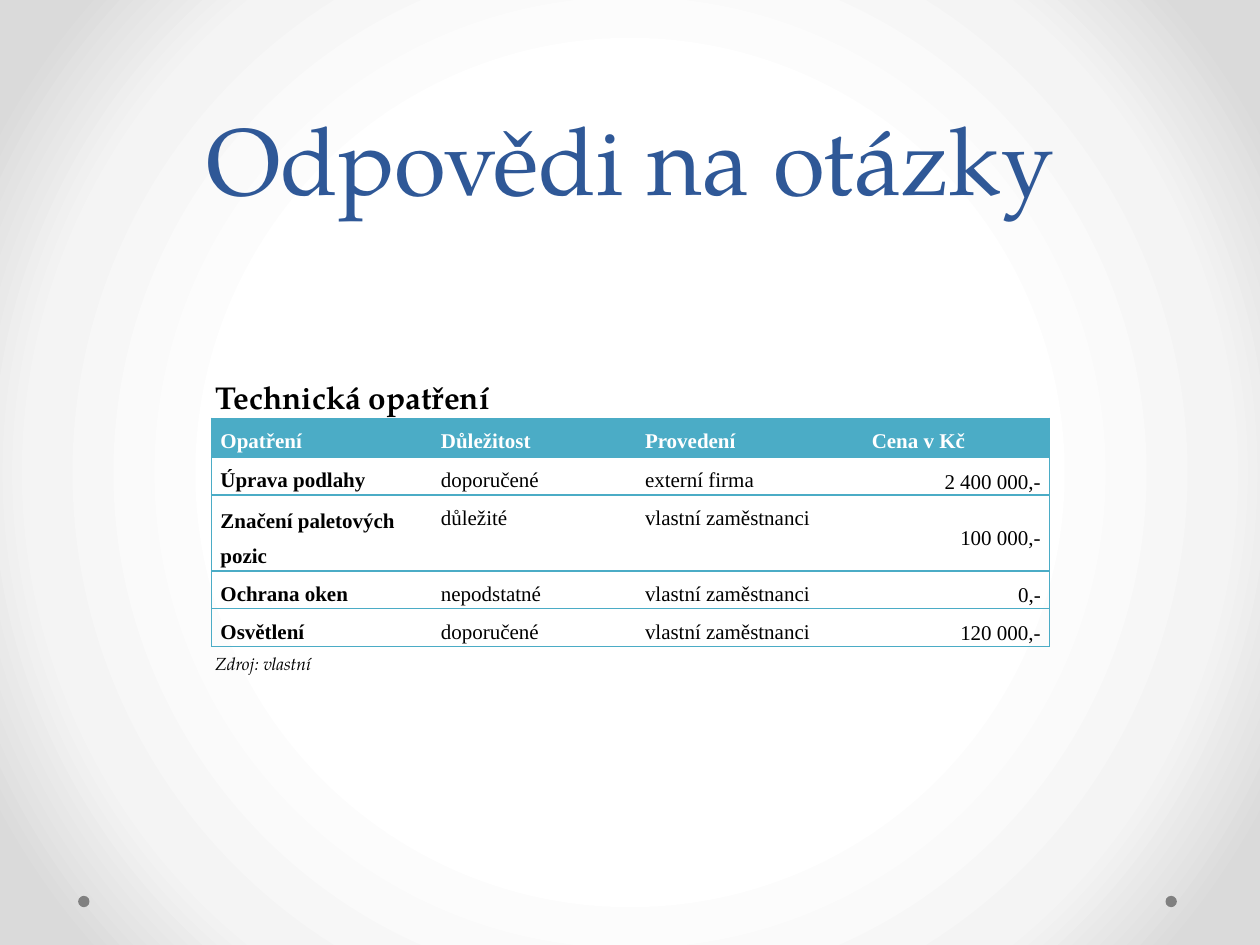
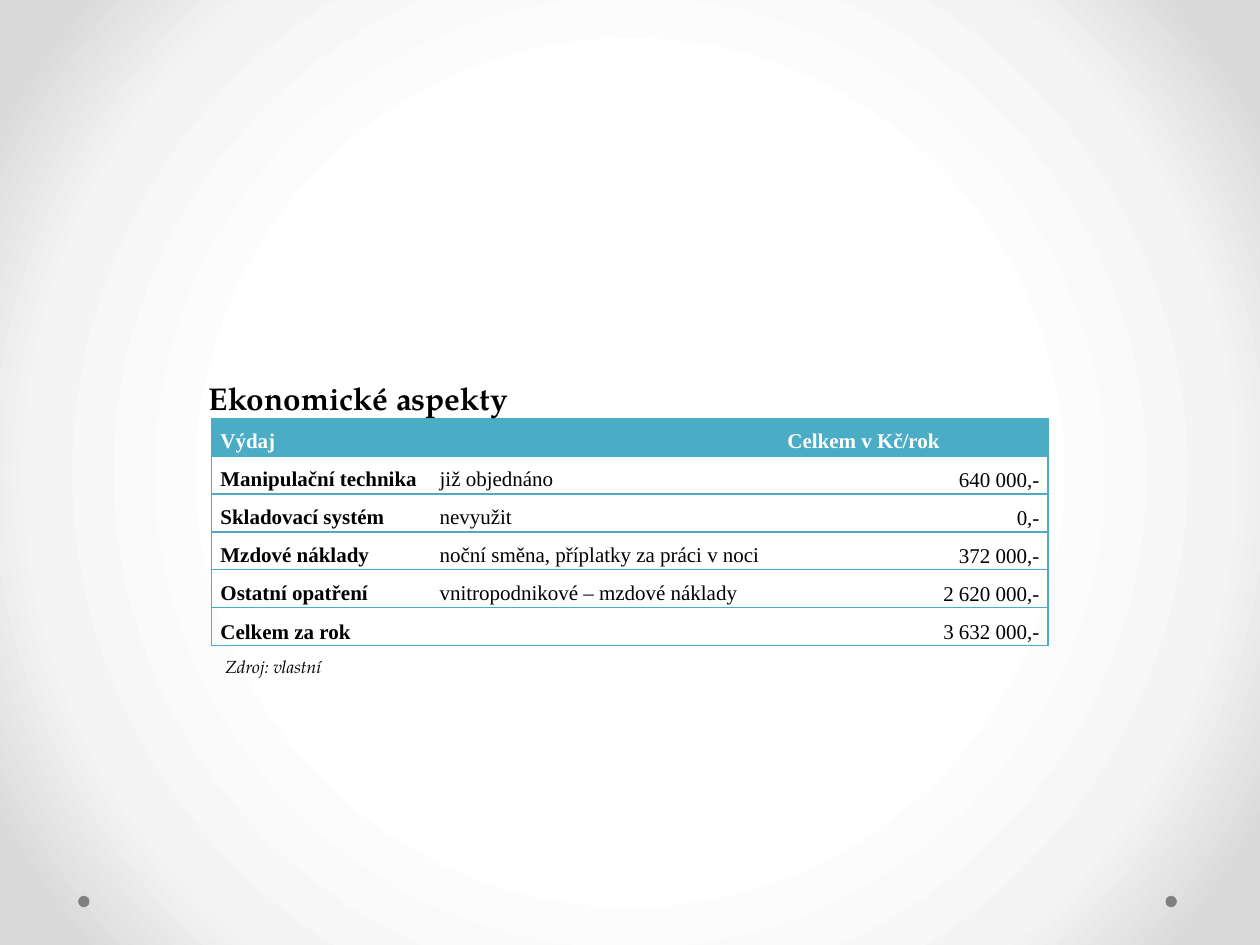
"""Build two slides of answers: technical measures and economic aspects."""
from dataclasses import dataclass
from typing import Optional

import lxml.etree
import pptx
import pptx.dml.color
import pptx.enum.shapes
import pptx.enum.text
import pptx.oxml
import pptx.oxml.ns
import pptx.presentation
import pptx.slide
import pptx.table
import pptx.text.text
import pptx.util

ALIGN = pptx.enum.text.PP_ALIGN
ANCHOR = pptx.enum.text.MSO_ANCHOR
AUTO_SIZE = pptx.enum.text.MSO_AUTO_SIZE
qn = pptx.oxml.ns.qn

SLIDE_WIDTH = pptx.util.Inches(10)
SLIDE_HEIGHT = pptx.util.Inches(7.5)
COLUMN = SLIDE_WIDTH // 100
ROW = SLIDE_HEIGHT // 75


@dataclass(frozen=True)
class TextStyle:
    """Look of a run of text."""
    size: float
    font: str
    color: str = "000000"
    bold: bool = False
    italic: bool = False


@dataclass(frozen=True)
class Theme:
    """Colours and type styles shared by the slides."""
    accent: str = "4BACC6"
    dot: str = "808080"
    border_width: float = 1
    title_leading: float = 58
    cell_leading: float = 1.5
    backdrop: tuple = ((50, "FFFFFF"), (76, "F4F4F4"), (92, "DADADA"))
    title: TextStyle = TextStyle(54, "TeX Gyre Pagella", "2F5897")
    caption: TextStyle = TextStyle(18, "TeX Gyre Pagella", bold=True)
    source: TextStyle = TextStyle(10, "TeX Gyre Pagella", italic=True)
    header: TextStyle = TextStyle(12, "Times New Roman", "FFFFFF", bold=True)
    label: TextStyle = TextStyle(12, "Times New Roman", bold=True)
    body: TextStyle = TextStyle(12, "Times New Roman")


THEME = Theme()


@dataclass(frozen=True)
class Area:
    """Place on the slide in grid columns and rows."""
    left: float
    top: float
    width: float
    height: float

    def box(self) -> tuple[int, int, int, int]:
        """Return left, top, width and height as lengths."""
        return (round(self.left * COLUMN), round(self.top * ROW),
                round(self.width * COLUMN), round(self.height * ROW))


@dataclass(frozen=True)
class CostSlide:
    """Captioned cost table with its source line."""
    caption: str
    caption_area: Area
    source_area: Area
    columns: tuple[float, ...]
    rows: tuple[float, ...]
    left_aligned_label: str
    cells: tuple[tuple[str, ...], ...]
    title: Optional[str] = None


TITLE_AREA = Area(5, 0, 90, 17.5)
DOT_AREAS = tuple(Area(left, 71.1, 0.9, 0.9) for left in (6.2, 92.5))
TABLE_LEFT, TABLE_TOP = 16.8, 33.2
CELL_INSET = round(0.7 * COLUMN)
SOURCE = "Zdroj: vlastní"

COST_SLIDES = (
    CostSlide(
        title="Odpovědi na otázky",
        caption="Technická opatření",
        caption_area=Area(16.1, 29.5, 24, 4),
        source_area=Area(16.1, 51.3, 9.8, 2.7),
        columns=(17.5, 16.2, 18, 14.8),
        rows=(3.1, 3, 6, 3, 3),
        left_aligned_label="Značení paletových pozic",
        cells=(
            ("Opatření", "Důležitost", "Provedení", "Cena v Kč"),
            ("Úprava podlahy", "doporučené", "externí firma", "2 400 000,-"),
            ("Značení paletových pozic", "důležité", "vlastní zaměstnanci", "100 000,-"),
            ("Ochrana oken", "nepodstatné", "vlastní zaměstnanci", "0,-"),
            ("Osvětlení", "doporučené", "vlastní zaměstnanci", "120 000,-"),
        ),
    ),
    CostSlide(
        caption="Ekonomické aspekty",
        caption_area=Area(15.6, 29.6, 26.1, 4),
        source_area=Area(16.9, 51.6, 9.8, 2.7),
        columns=(17.4, 27.6, 21.4),
        rows=(2.8,) * 6,
        left_aligned_label="Celkem za rok",
        cells=(
            ("Výdaj", "", "Celkem v Kč/rok"),
            ("Manipulační technika", "již objednáno", "640 000,-"),
            ("Skladovací systém", "nevyužit", "0,-"),
            ("Mzdové náklady", "noční směna, příplatky za práci v noci", "372 000,-"),
            ("Ostatní opatření", "vnitropodnikové – mzdové náklady", "2 620 000,-"),
            ("Celkem za rok", "", "3 632 000,-"),
        ),
    ),
)


def rgb(color: str) -> pptx.dml.color.RGBColor:
    """Turn a hex colour into an RGB colour."""
    return pptx.dml.color.RGBColor.from_string(color)


def paint_backdrop(deck: pptx.presentation.Presentation) -> None:
    """Give the slide master a circular gradient."""
    deck.slide_master.background.fill.solid()
    properties = deck.slide_master.element.find(".//" + qn("p:bgPr"))
    stops = "".join(
        f'<a:gs pos="{share * 1000}"><a:srgbClr val="{color}"/></a:gs>'
        for share, color in THEME.backdrop)
    gradient = pptx.oxml.parse_xml(
        f'<a:gradFill {pptx.oxml.ns.nsdecls("a")} rotWithShape="1">'
        f'<a:gsLst>{stops}</a:gsLst><a:path path="circle">'
        '<a:fillToRect l="50000" t="50000" r="50000" b="50000"/></a:path></a:gradFill>')
    properties.replace(properties.find(qn("a:solidFill")), gradient)


def write(paragraph: pptx.text.text._Paragraph, text: str, style: TextStyle) -> None:
    """Add one styled run, or size the empty paragraph."""
    if not text:
        lxml.etree.SubElement(paragraph._p, qn("a:endParaRPr"), sz=str(style.size * 100))
        return
    run = paragraph.add_run()
    run.text = text
    font = run.font
    font.name, font.size = style.font, pptx.util.Pt(style.size)
    font.bold, font.italic = style.bold, style.italic
    font.color.rgb = rgb(style.color)


def draw_title(slide: pptx.slide.Slide, text: str) -> None:
    """Draw the large centred title."""
    frame = slide.shapes.add_textbox(*TITLE_AREA.box()).text_frame
    frame.word_wrap = True
    frame.vertical_anchor = ANCHOR.BOTTOM
    paragraph = frame.paragraphs[0]
    paragraph.alignment = ALIGN.CENTER
    paragraph.line_spacing = pptx.util.Pt(THEME.title_leading)
    write(paragraph, text, THEME.title)


def draw_note(slide: pptx.slide.Slide, text: str, area: Area, style: TextStyle) -> None:
    """Draw a single line of text that fits its box."""
    frame = slide.shapes.add_textbox(*area.box()).text_frame
    frame.word_wrap = False
    frame.auto_size = AUTO_SIZE.SHAPE_TO_FIT_TEXT
    write(frame.paragraphs[0], text, style)


def draw_dot(slide: pptx.slide.Slide, area: Area) -> None:
    """Draw a small footer dot."""
    dot = slide.shapes.add_shape(pptx.enum.shapes.MSO_SHAPE.OVAL, *area.box())
    dot.shadow.inherit = False
    dot.fill.solid()
    dot.fill.fore_color.rgb = rgb(THEME.dot)
    dot.line.fill.background()


def rule_cell(cell: pptx.table._Cell, ruled_sides: str) -> None:
    """Rule the given sides of a cell and clear the others."""
    properties = cell._tc.get_or_add_tcPr()
    for side in "LRTB":
        border = lxml.etree.SubElement(
            properties, qn(f"a:ln{side}"), w=str(pptx.util.Pt(THEME.border_width)))
        if side in ruled_sides:
            paint = lxml.etree.SubElement(border, qn("a:solidFill"))
            lxml.etree.SubElement(paint, qn("a:srgbClr"), val=THEME.accent)
        else:
            lxml.etree.SubElement(border, qn("a:noFill"))


def draw_table(slide: pptx.slide.Slide, content: CostSlide) -> None:
    """Draw the cost table with a filled header row."""
    area = Area(TABLE_LEFT, TABLE_TOP, sum(content.columns), sum(content.rows))
    table = slide.shapes.add_table(
        len(content.rows), len(content.columns), *area.box()).table
    table.horz_banding = False
    for column, width in zip(table.columns, content.columns):
        column.width = round(width * COLUMN)
    for row, height in zip(table.rows, content.rows):
        row.height = round(height * ROW)
    last = len(content.columns) - 1
    for row_index, texts in enumerate(content.cells):
        for column_index, text in enumerate(texts):
            cell = table.cell(row_index, column_index)
            is_header = row_index == 0
            is_label = column_index == 0
            is_amount = column_index == last and not is_header
            is_left = text == content.left_aligned_label
            rule_cell(cell, "TB" + "L" * is_label + "R" * (column_index == last))
            if is_header:
                cell.fill.solid()
                cell.fill.fore_color.rgb = rgb(THEME.accent)
            else:
                cell.fill.background()
            cell.margin_left = cell.margin_right = CELL_INSET
            cell.margin_top = cell.margin_bottom = 0
            cell.vertical_anchor = ANCHOR.MIDDLE if is_amount or is_left else ANCHOR.TOP
            paragraph = cell.text_frame.paragraphs[0]
            paragraph.alignment = (ALIGN.RIGHT if is_amount else
                                   ALIGN.LEFT if is_left else ALIGN.JUSTIFY)
            if text:
                paragraph.line_spacing = THEME.cell_leading
            style = THEME.header if is_header else THEME.label if is_label else THEME.body
            write(paragraph, text, style)


def draw_cost_slide(deck: pptx.presentation.Presentation, content: CostSlide) -> None:
    """Add one slide with its dots, title, table and notes."""
    slide = deck.slides.add_slide(deck.slide_layouts[6])
    for area in DOT_AREAS:
        draw_dot(slide, area)
    if content.title:
        draw_title(slide, content.title)
    draw_table(slide, content)
    draw_note(slide, content.caption, content.caption_area, THEME.caption)
    draw_note(slide, SOURCE, content.source_area, THEME.source)


def main() -> None:
    """Build and save the slides."""
    deck = pptx.Presentation()
    deck.slide_width, deck.slide_height = SLIDE_WIDTH, SLIDE_HEIGHT
    paint_backdrop(deck)
    for content in COST_SLIDES:
        draw_cost_slide(deck, content)
    deck.save("out.pptx")


if __name__ == "__main__":
    main()
